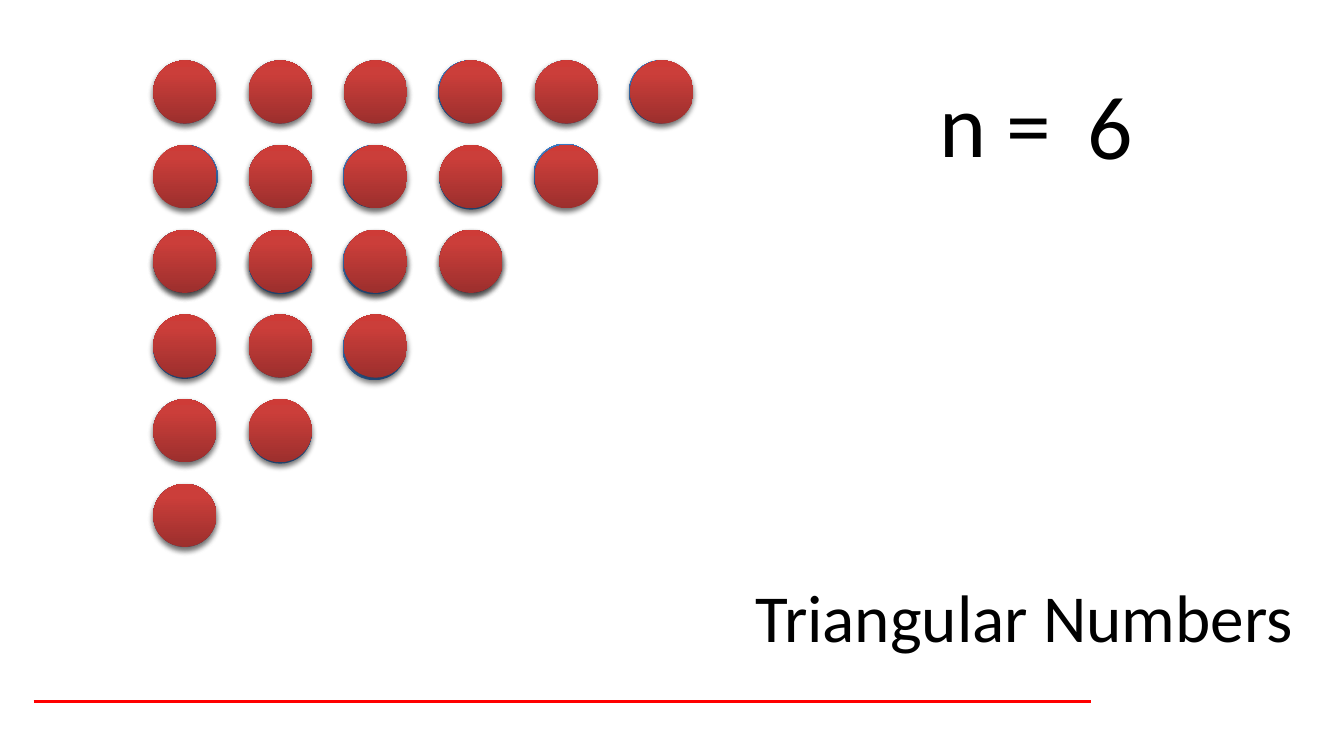
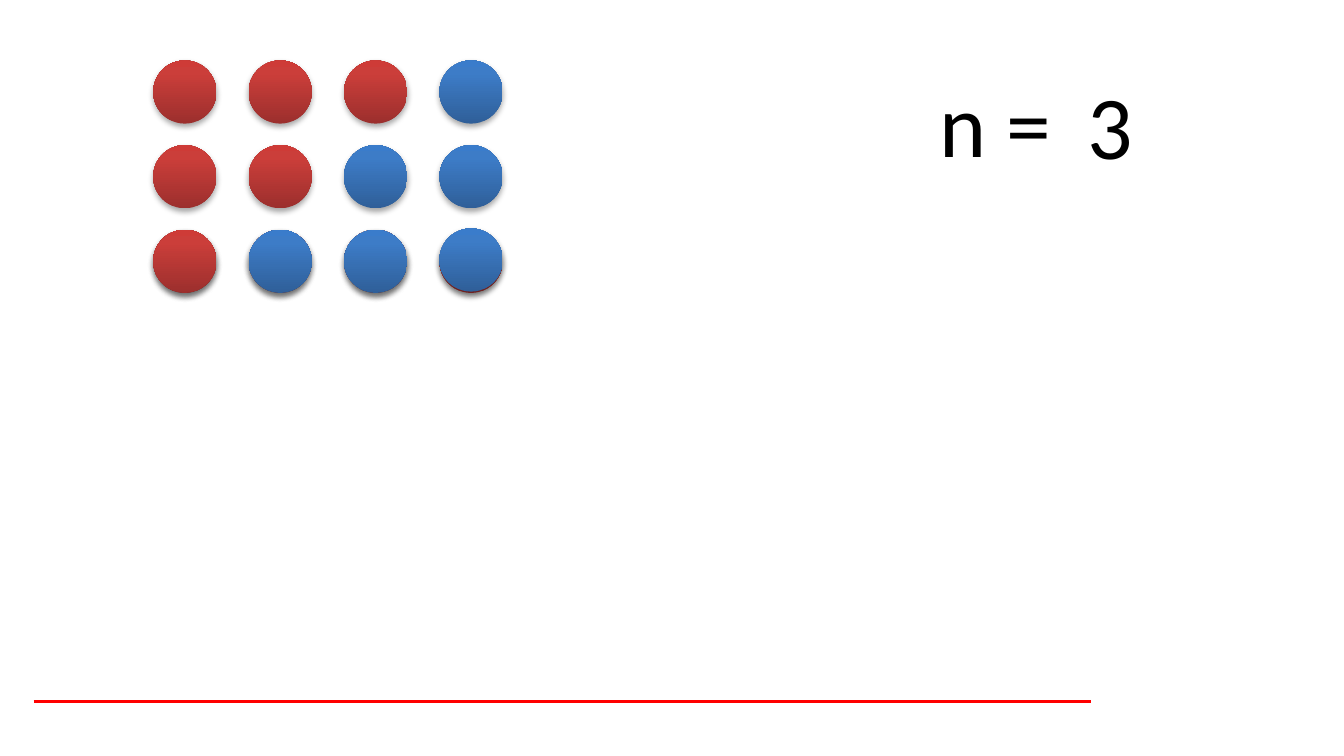
from copy import deepcopy

from pptx import Presentation
from pptx.dml.color import RGBColor
from pptx.enum.shapes import MSO_CONNECTOR, MSO_SHAPE
from pptx.enum.text import MSO_AUTO_SIZE as AUTO_SIZE, PP_ALIGN
from pptx.oxml import parse_xml
from pptx.oxml.ns import nsdecls, qn
from pptx.util import Inches, Pt

color = RGBColor.from_string
BLUE = ["2F5F99", "3D7CC7", "3A7CCB"]
RED = ["9C2F2D", "CB3E3A", "CE3B37"]
STOPS = [0, 0.8, 1]
LEFT, TOP, STEP_X, STEP_Y, SIZE = 1.14, 0.45, 0.71, 0.63, 0.47
SHADOW = (
    f'<a:outerShdw {nsdecls("a")} blurRad="40000" dist="23000" dir="5400000" rotWithShape="0">'
    '<a:srgbClr val="000000"><a:alpha val="35000"/></a:srgbClr></a:outerShdw>'
)


def add_counter(page, row, column, shades, nudge=(0, 0)):
    """Place one shaded counter on the grid, moved by nudge inches."""
    left = LEFT + column * STEP_X + nudge[0]
    top = TOP + row * STEP_Y + nudge[1]
    counter = page.shapes.add_shape(
        MSO_SHAPE.OVAL, Inches(left), Inches(top), Inches(SIZE), Inches(SIZE))
    counter.fill.gradient()
    counter.fill.gradient_angle = 90
    properties = counter.element.spPr
    stop_list = properties.find(qn("a:gradFill")).find(qn("a:gsLst"))
    stop_list.append(deepcopy(stop_list[-1]))
    for stop, position, shade in zip(counter.fill.gradient_stops, STOPS, shades):
        stop.position = position
        stop.color.rgb = color(shade)
    counter.line.fill.background()
    counter.shadow.inherit = False
    properties.find(qn("a:effectLst")).append(parse_xml(SHADOW))


def add_label(page, text, left, top, width, height, size, align=PP_ALIGN.LEFT):
    box = page.shapes.add_textbox(Inches(left), Inches(top), Inches(width), Inches(height))
    frame = box.text_frame
    frame.word_wrap = True
    frame.auto_size = AUTO_SIZE.SHAPE_TO_FIT_TEXT
    frame.text = text
    para = frame.paragraphs[0]
    para.alignment = align
    span = para.runs[0]
    span.font.size = Pt(size)
    span.font.name = "Calibri"
    span.font.color.rgb = color("000000")


deck = Presentation()
deck.slide_width = Inches(10)
deck.slide_height = deck.slide_width * 9 // 16

# Shared by both slides: red rule, value of n, doubled third row of counters
pages = []
for n in (6, 3):
    page = deck.slides.add_slide(deck.slide_layouts[6])
    pages.append(page)
    rule = page.shapes.add_connector(
        MSO_CONNECTOR.STRAIGHT, Inches(0.25), Inches(5.22), Inches(8.12), Inches(5.22))
    rule.line.color.rgb = color("FF0000")
    rule.line.width = Pt(2)
    rule.element.spPr.append(parse_xml(f'<a:effectLst {nsdecls("a")}/>'))
    add_label(page, "n =", 6.89, 0.46, 1.26, 0.91, 48)
    add_label(page, str(n), 7.99, 0.47, 1.26, 0.91, 48)
    for column in range(4):
        add_counter(page, 2, column, RED)
triangle_page, rectangle_page = pages

# Slide 1: a red triangle lying on a blue one that peeks out at some edges
blue_nudges = {
    (0, 3): (-0.01, 0), (0, 5): (-0.01, 0),
    (1, 0): (0.01, 0), (1, 2): (-0.01, 0), (1, 3): (0, 0.01), (1, 4): (-0.01, -0.01),
    (2, 1): (0, 0.01), (2, 2): (-0.01, 0.01),
    (3, 0): (0, 0.01), (3, 2): (-0.01, 0.02),
    (4, 1): (0, 0.01),
}
triangle = [(row, column) for row in range(6) for column in range(6 - row)]
for cell in triangle:
    add_counter(triangle_page, *cell, BLUE, blue_nudges.get(cell, (0, 0)))
for cell in triangle:
    add_counter(triangle_page, *cell, RED)
add_label(triangle_page, "Triangular Numbers", 4.13, 4.23, 5.59, 0.71, 36, PP_ALIGN.RIGHT)

# Slide 2: two triangles, red and blue, make a 3 by 4 rectangle
for row in range(3):
    for column in range(4):
        shades = RED if row + column < 3 else BLUE
        nudge = (0, -0.01) if (row, column) == (2, 3) else (0, 0)
        add_counter(rectangle_page, row, column, shades, nudge)

deck.save("out.pptx")
